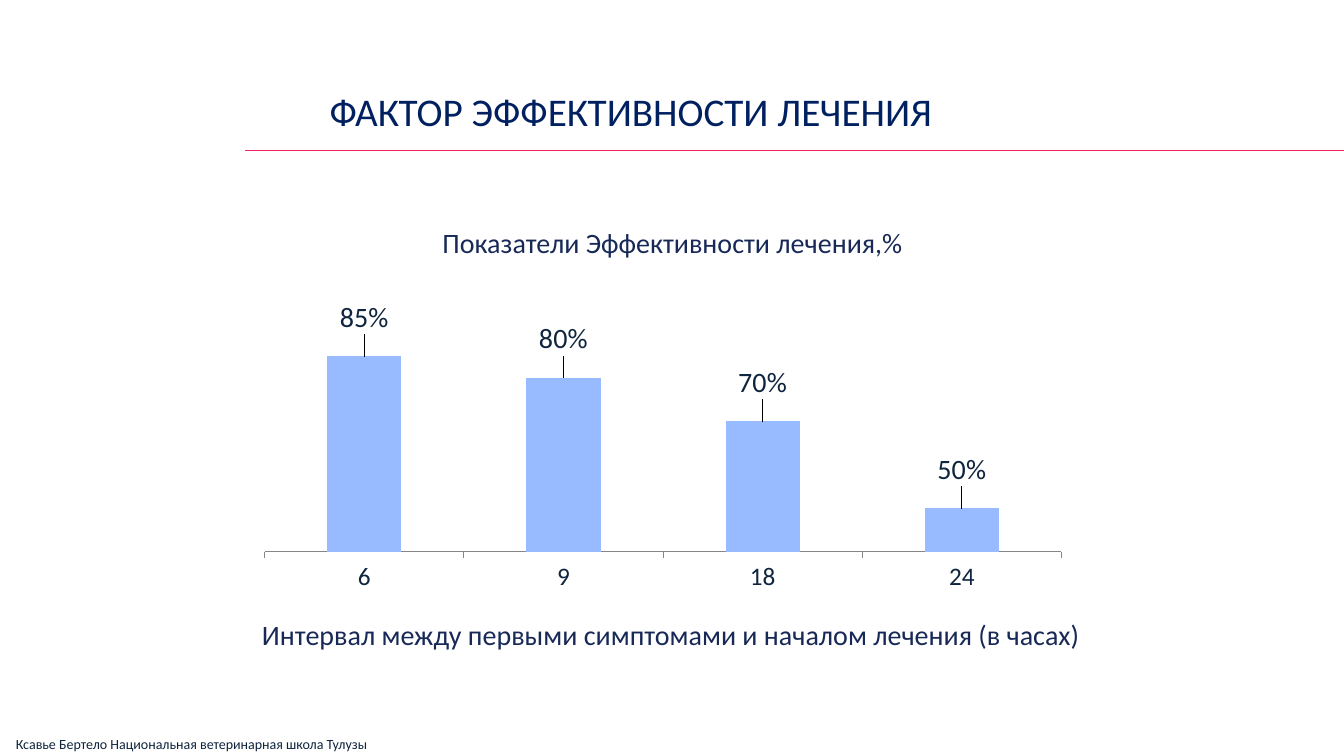
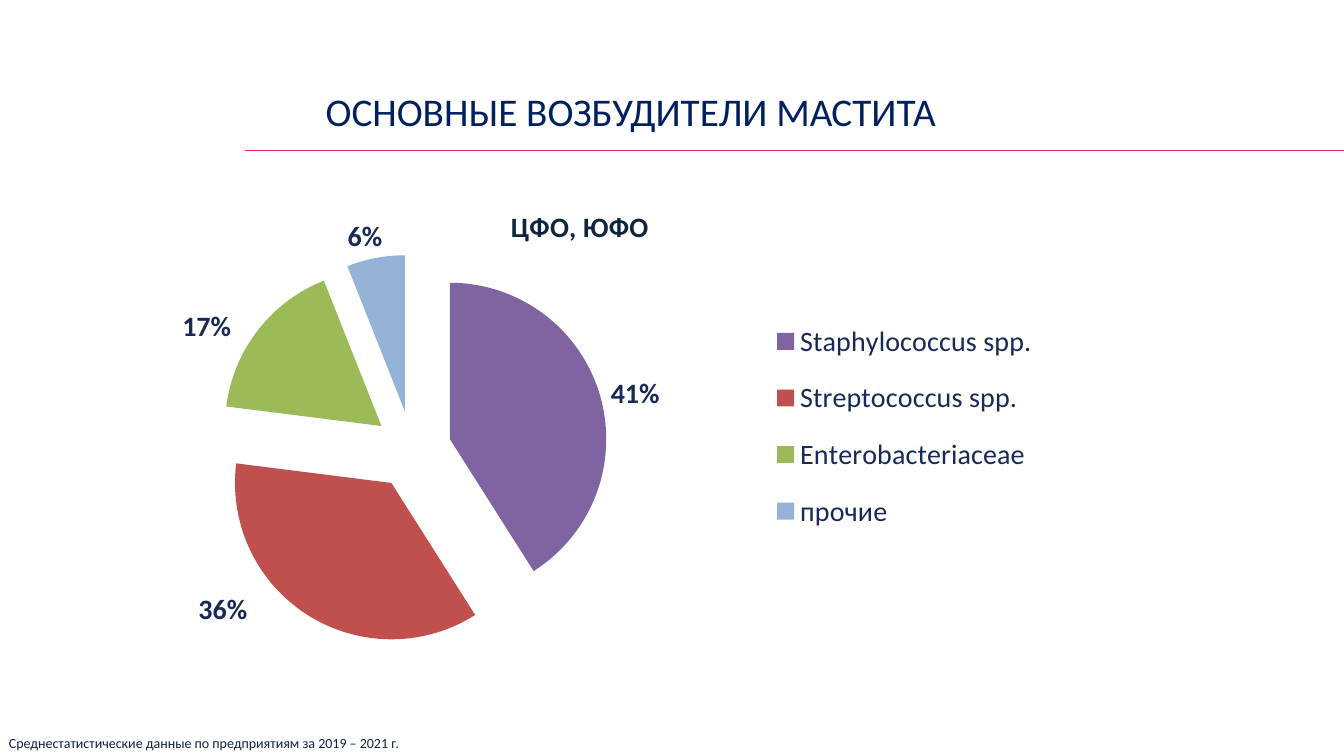
"""Build two slides on mastitis treatment and its main pathogens."""
from dataclasses import dataclass

from lxml import etree
from pptx import Presentation
from pptx.chart.data import CategoryChartData
from pptx.dml.color import RGBColor
from pptx.enum.chart import XL_CHART_TYPE, XL_LABEL_POSITION, XL_LEGEND_POSITION, XL_TICK_MARK
from pptx.enum.shapes import MSO_CONNECTOR
from pptx.enum.text import PP_ALIGN
from pptx.oxml.ns import qn
from pptx.util import Inches, Pt

COLUMN = XL_CHART_TYPE.COLUMN_CLUSTERED
PIE = XL_CHART_TYPE.PIE
ABOVE = XL_LABEL_POSITION.OUTSIDE_END
RIGHT = XL_LEGEND_POSITION.RIGHT
TICK_OUT, TICK_NONE = XL_TICK_MARK.OUTSIDE, XL_TICK_MARK.NONE
STRAIGHT = MSO_CONNECTOR.STRAIGHT
LEFT, CENTER = PP_ALIGN.LEFT, PP_ALIGN.CENTER


@dataclass(frozen=True)
class Theme:
    font: str = "Calibri"
    title: str = "002060"
    text: str = "182957"
    dark: str = "0F243E"
    rule: str = "F82160"
    axis: str = "868686"
    bar: str = "98BAFF"
    slices: tuple = ("8064A2", "C0504D", "9BBB59", "95B3D7")
    head_size: int = 28
    body_size: int = 20
    tick_size: int = 18
    note_size: int = 10


@dataclass(frozen=True)
class Label:
    text: str
    left: float
    top: float
    width: float
    size: int
    color: str
    bold: bool = False
    align: int = LEFT
    height: float = 0.44


THEME = Theme()


def paint(font, size: int, color: str, bold: bool = False) -> None:
    font.name, font.size, font.bold = THEME.font, Pt(size), bold
    font.color.rgb = RGBColor.from_string(color)


def fill(part, color: str) -> None:
    part.format.fill.solid()
    part.format.fill.fore_color.rgb = RGBColor.from_string(color)


def write(slide, label: Label):
    box = slide.shapes.add_textbox(Inches(label.left), Inches(label.top),
                                   Inches(label.width), Inches(label.height))
    frame = box.text_frame
    frame.word_wrap = True
    frame.text = label.text
    line = frame.paragraphs[0]
    line.alignment = label.align
    paint(line.runs[0].font, label.size, label.color, label.bold)
    return line


def start(deck, title: str, note: Label):
    slide = deck.slides.add_slide(deck.slide_layouts[6])
    rule = slide.shapes.add_connector(STRAIGHT, Inches(2.43), Inches(1.49), Inches(13.33), Inches(1.49))
    rule.line.color.rgb = RGBColor.from_string(THEME.rule)
    rule.line.width = Pt(0.75)
    etree.SubElement(rule.element.spPr, qn("a:effectLst"))
    head = write(slide, Label(title, 2.16, 0.95, 8.19, THEME.head_size, THEME.title, align=CENTER))
    head.line_spacing = Pt(24)
    write(slide, note)
    return slide


def place(part, index: int, **values) -> None:
    for old in part.findall(qn("c:layout")):
        part.remove(old)
    layout = etree.Element(qn("c:layout"))
    manual = etree.SubElement(layout, qn("c:manualLayout"))
    for name, value in values.items():
        etree.SubElement(manual, qn(f"c:{name}")).set("val", str(value))
    part.insert(index, layout)


def add_chart(slide, kind, area: tuple, names: tuple, values: tuple, form: str, plot: tuple):
    data = CategoryChartData(number_format=form)
    data.categories = names
    data.add_series("Series 1", values)
    chart = slide.shapes.add_chart(kind, *map(Inches, area), data).chart
    paint(chart.font, THEME.tick_size, THEME.dark)
    chart.has_title = chart.has_legend = False
    x, y, w, h = plot
    place(chart.element.xpath(".//c:plotArea")[0], 0, layoutTarget="inner",
          xMode="edge", yMode="edge", x=x, y=y, w=w, h=h)
    return chart


def draw_bars(slide) -> None:
    chart = add_chart(slide, COLUMN, (2.62, 2.57, 8.07, 3.5), ("6", "9", "18", "24"),
                      (0.85, 0.8, 0.7, 0.5), "0%", (0, 0.09, 0.98, 0.74))
    scale = chart.value_axis
    scale.minimum_scale, scale.maximum_scale = 0.4, 1
    scale.has_major_gridlines = scale.visible = False
    base = chart.category_axis
    base.major_tick_mark, base.minor_tick_mark = TICK_OUT, TICK_NONE
    base.format.line.color.rgb = RGBColor.from_string(THEME.axis)
    paint(base.tick_labels.font, THEME.tick_size, THEME.dark)
    plot = chart.plots[0]
    plot.gap_width, plot.vary_by_categories = 168, False
    bars = plot.series[0]
    fill(bars, THEME.bar)
    tags = bars.data_labels
    tags.show_value = True
    tags.number_format, tags.number_format_is_linked = "0%", False
    paint(tags.font, THEME.body_size, THEME.dark)
    for index in range(len(bars.values)):
        tag = bars.points[index].data_label
        tag.position = ABOVE
        paint(tag.font, THEME.body_size, THEME.dark)
    for tag in chart.element.xpath(".//c:dLbl"):
        place(tag, 1, x=0, y=-0.05)


def draw_pie(slide) -> None:
    names = ("Staphylococcus spp.", "Streptococcus spp.", "Enterobacteriaceae", "прочие")
    chart = add_chart(slide, PIE, (0.32, 1.74, 12.36, 5.24), names,
                      (41, 36, 17, 6), "General", (0.13, 0.15, 0.35, 0.74))
    chart.has_title = chart.has_legend = True
    frame = chart.chart_title.text_frame
    frame.text = "ЦФО, ЮФО"
    paint(frame.paragraphs[0].runs[0].font, THEME.body_size, THEME.dark, True)
    place(chart.element.xpath(".//c:title")[0], 1, xMode="edge", yMode="edge", x=0.38, y=0.05)
    legend = chart.legend
    legend.position, legend.include_in_layout = RIGHT, False
    paint(legend.font, THEME.body_size, THEME.text)
    place(chart.element.xpath(".//c:legend")[0], 1, xMode="edge", yMode="edge",
          x=0.59, y=0.24, w=0.22, h=0.47)
    series = chart.plots[0].series[0]
    for index, color in enumerate(THEME.slices):
        fill(series.points[index], color)
    burst = etree.Element(qn("c:explosion"), val="25")
    chart.element.xpath(".//c:dPt")[0].addprevious(burst)


def main() -> None:
    deck = Presentation()
    deck.slide_width, deck.slide_height = Inches(13.33), Inches(7.5)

    slide = start(deck, "ФАКТОР ЭФФЕКТИВНОСТИ ЛЕЧЕНИЯ",
                  Label("Ксавье Бертело Национальная ветеринарная школа Тулузы",
                        0.06, 7.25, 5.51, THEME.note_size, THEME.dark, height=0.28))
    draw_bars(slide)
    for text, left, top, width in (
            ("Показатели Эффективности лечения,%", 4.29, 2.19, 5),
            ("Интервал между первыми симптомами и началом лечения (в часах)", 2.5, 6.08, 8.6)):
        write(slide, Label(text, left, top, width, THEME.body_size, THEME.text))

    slide = start(deck, "ОСНОВНЫЕ ВОЗБУДИТЕЛИ МАСТИТА",
                  Label("Среднестатистические данные по предприятиям за 2019 – 2021 г.",
                        -0.01, 7.24, 4.4, THEME.note_size, THEME.dark, height=0.27))
    draw_pie(slide)
    for text, left, top in (("41%", 5.96, 3.68), ("36%", 1.87, 5.82),
                            ("17%", 1.71, 3.01), ("6%", 3.35, 2.12)):
        write(slide, Label(text, left, top, 0.8, THEME.body_size, THEME.text, True))

    deck.save("out.pptx")


if __name__ == "__main__":
    main()
